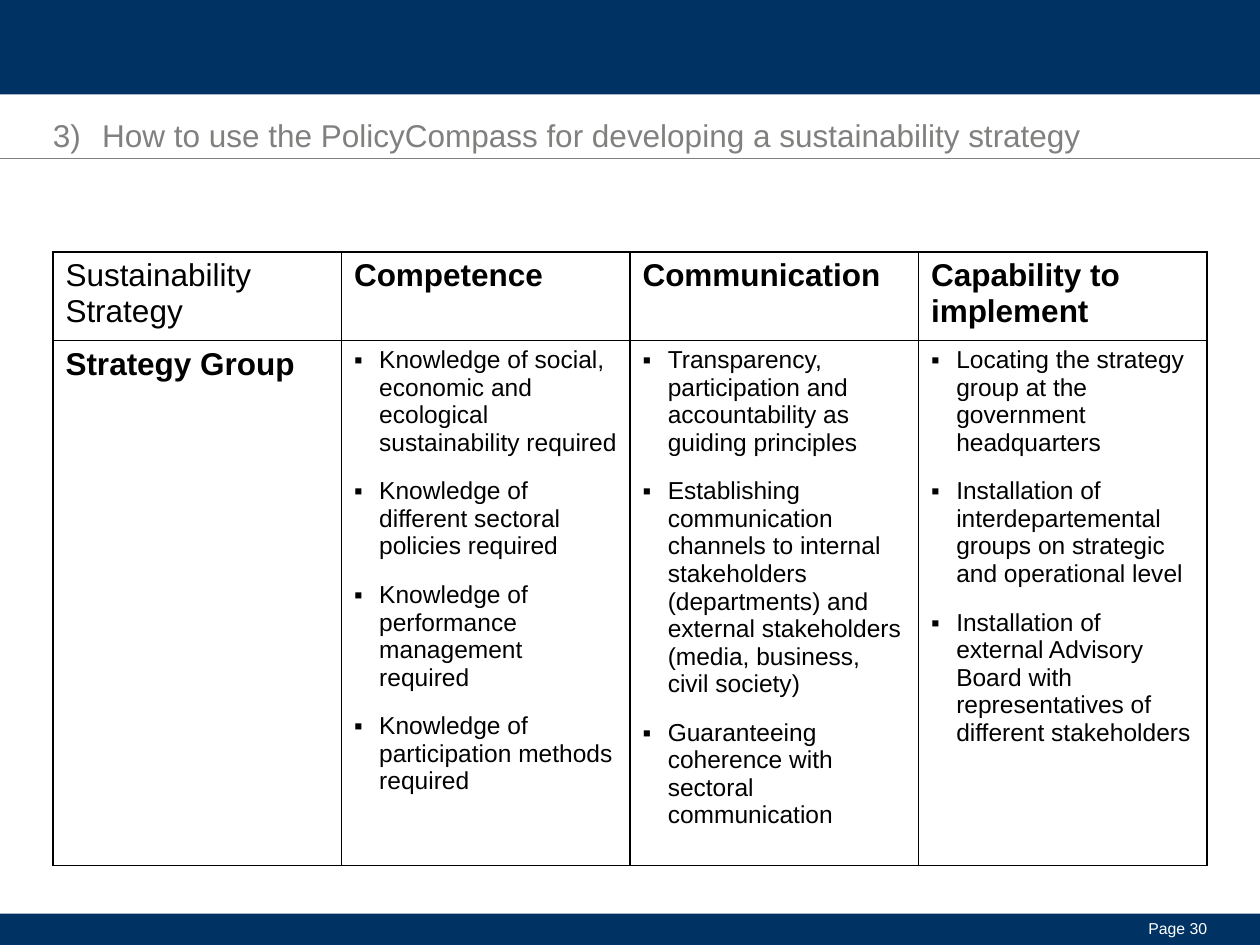
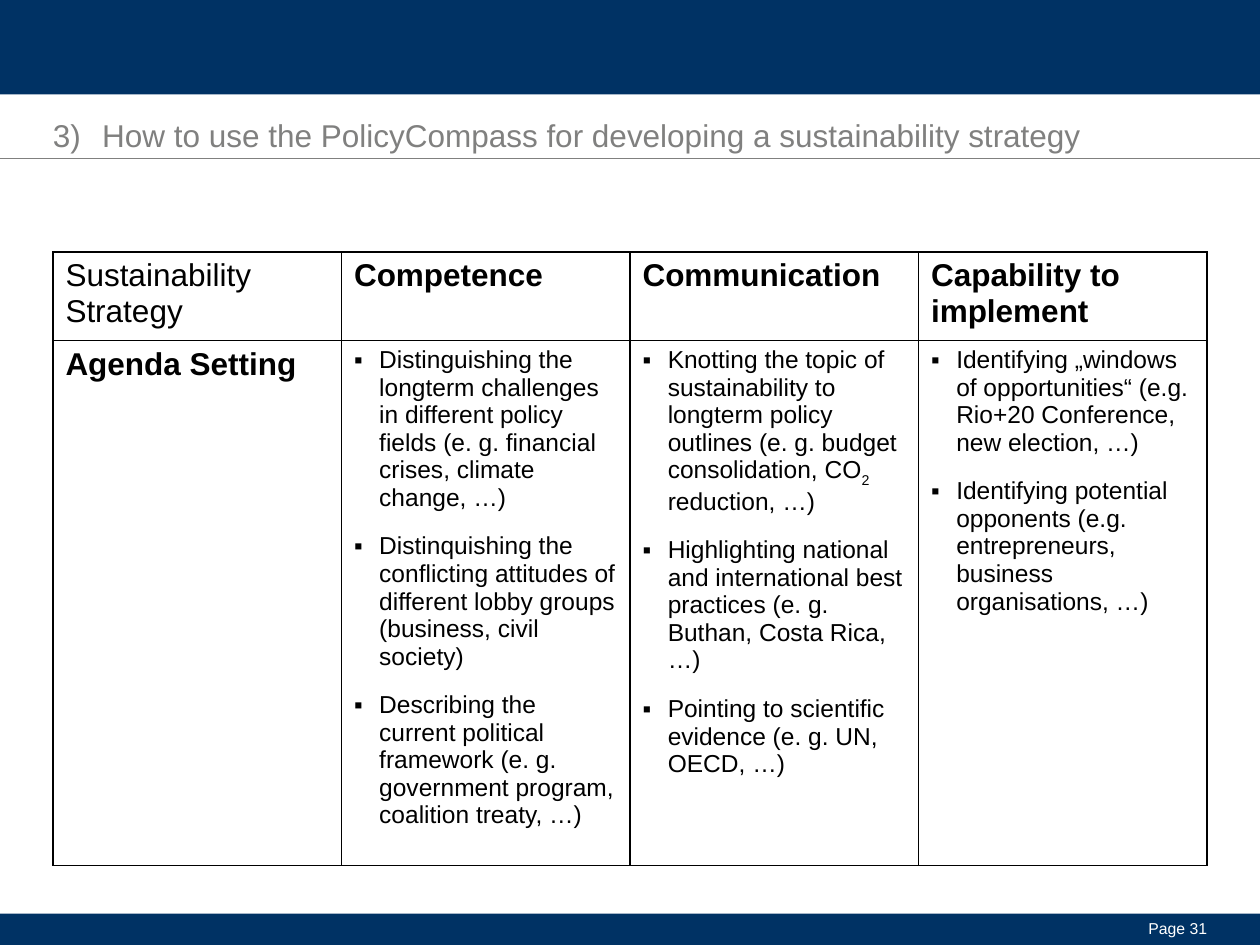
from lxml import etree
from pptx import Presentation
from pptx.dml.color import RGBColor
from pptx.enum import shapes, text
from pptx.oxml import ns
from pptx.util import Inches, Pt

NAVY = RGBColor(0x00, 0x32, 0x64)
GREY = RGBColor(0x80, 0x80, 0x7F)
BLACK = RGBColor(0, 0, 0)
WHITE = RGBColor(255, 255, 255)
FONT = "Arial"

SLIDE_WIDTH, SLIDE_HEIGHT = 10, 7.5
MARGIN = 0.42
CONTENT_WIDTH = SLIDE_WIDTH - 2 * MARGIN
TITLE = "3)\tHow to use the PolicyCompass for developing a sustainability strategy"
HEADINGS = ["Sustainability Strategy", "Competence", "Communication",
            "Capability to implement"]
HEADING_HEIGHT, BODY_HEIGHT = 0.66, 3.93

# Each stage: page number, name, and one list of points per criterion.
# A point is a string, or a list of (text, is_subscript) parts.
STAGES = [
    (30, "Strategy Group", [
        ["Knowledge of social, economic and ecological sustainability required",
         "Knowledge of different sectoral policies required",
         "Knowledge of performance management required",
         "Knowledge of participation methods required"],
        ["Transparency, participation and accountability as guiding principles",
         "Establishing communication channels to internal stakeholders "
         "(departments) and external stakeholders (media, business, civil society)",
         "Guaranteeing coherence with sectoral communication"],
        ["Locating the strategy group at the government headquarters",
         "Installation of interdepartemental groups on strategic and "
         "operational level",
         "Installation of external Advisory Board with representatives of "
         "different stakeholders"],
    ]),
    (31, "Agenda Setting", [
        ["Distinguishing the longterm challenges in different policy fields "
         "(e. g. financial crises, climate change, …)",
         "Distinquishing the conflicting attitudes of different lobby groups "
         "(business, civil society)",
         "Describing the current political framework (e. g. government "
         "program, coalition treaty, …)"],
        [[("Knotting the topic of sustainability to longterm policy outlines "
           "(e. g. budget consolidation, CO", False),
          ("2 ", True), ("reduction, …)", False)],
         "Highlighting national and international best practices "
         "(e. g. Buthan, Costa Rica, …)",
         "Pointing to scientific evidence (e. g. UN, OECD, …)"],
        ["Identifying „windows of opportunities“ (e.g. Rio+20 Conference, "
         "new election, …)",
         "Identifying potential opponents (e.g. entrepreneurs, business "
         "organisations, …)"],
    ]),
]


def style_runs(paragraph, size, color, bold=False):
    for run in paragraph.runs:
        run.font.name = FONT
        run.font.size = Pt(size)
        run.font.bold = bold
        run.font.color.rgb = color


def set_hanging_indent(paragraph, indent):
    properties = paragraph._p.get_or_add_pPr()
    properties.set("marL", str(Inches(indent)))
    properties.set("indent", str(-Inches(indent)))
    return properties


def clear_margins(frame):
    frame.margin_left = frame.margin_right = 0
    frame.margin_top = frame.margin_bottom = 0
    frame.word_wrap = True


def add_band(slide, top, height):
    band = slide.shapes.add_shape(
        shapes.MSO_SHAPE.RECTANGLE, 0, Inches(top), Inches(SLIDE_WIDTH), Inches(height))
    band.shadow.inherit = False
    band.fill.solid()
    band.fill.fore_color.rgb = NAVY
    band.line.fill.background()


def add_title_rule(slide):
    y = Inches(1.26)
    rule = slide.shapes.add_connector(
        shapes.MSO_CONNECTOR.STRAIGHT, 0, y, Inches(SLIDE_WIDTH), y)
    rule.line.color.rgb = GREY
    rule.line.width = Pt(0.5)
    etree.SubElement(rule._element.spPr, ns.qn("a:effectLst"))


def format_title(slide):
    title = slide.shapes.title
    title.left, title.top = Inches(MARGIN), Inches(0.92)
    title.width, title.height = Inches(CONTENT_WIDTH), Inches(0.42)
    frame = title.text_frame
    frame.text = TITLE
    clear_margins(frame)
    frame.vertical_anchor = text.MSO_ANCHOR.TOP
    frame.auto_size = text.MSO_AUTO_SIZE.NONE
    heading = frame.paragraphs[0]
    set_hanging_indent(heading, 0.39)
    heading.alignment = text.PP_ALIGN.LEFT
    style_runs(heading, 18, GREY)


def add_page_number(slide, number):
    width = 0.75
    box = slide.shapes.add_textbox(
        Inches(SLIDE_WIDTH - MARGIN - width), Inches(7.29), Inches(width), Inches(0.19))
    frame = box.text_frame
    frame.text = f"Page {number}"
    clear_margins(frame)
    frame.paragraphs[0].alignment = text.PP_ALIGN.RIGHT
    style_runs(frame.paragraphs[0], 9, WHITE)


def format_cell(cell):
    """Give the cell thin black borders and a white fill."""
    properties = cell._tc.get_or_add_tcPr()
    for side in ("lnL", "lnR", "lnT", "lnB"):
        border = etree.SubElement(properties, ns.qn(f"a:{side}"), w=str(Pt(1)))
        fill = etree.SubElement(border, ns.qn("a:solidFill"))
        etree.SubElement(fill, ns.qn("a:srgbClr"), val=str(BLACK))
    cell.fill.solid()
    cell.fill.fore_color.rgb = WHITE


def write_label(cell, label, bold=True):
    cell.text_frame.text = label
    style_runs(cell.text_frame.paragraphs[0], 18, BLACK, bold)


def write_points(cell, points):
    frame = cell.text_frame
    for index, point in enumerate(points):
        paragraph = frame.add_paragraph() if index else frame.paragraphs[0]
        properties = set_hanging_indent(paragraph, 0.2)
        etree.SubElement(properties, ns.qn("a:buFont"), typeface=FONT)
        etree.SubElement(properties, ns.qn("a:buChar"), char="▪")
        paragraph.space_after = Pt(12)
        parts = [(point, False)] if isinstance(point, str) else point
        for words, is_subscript in parts:
            run = paragraph.add_run()
            run.text = words
            if is_subscript:
                run._r.get_or_add_rPr().set("baseline", "-25000")
        style_runs(paragraph, 14, BLACK)


def add_criteria_table(slide, stage, criteria):
    frame = slide.shapes.add_table(
        2, len(HEADINGS), Inches(MARGIN), Inches(2),
        Inches(CONTENT_WIDTH), Inches(HEADING_HEIGHT + BODY_HEIGHT))
    table = frame.table
    table.first_row = table.horz_banding = False
    table.rows[0].height = Inches(HEADING_HEIGHT)
    table.rows[1].height = Inches(BODY_HEIGHT)
    for cell in table.iter_cells():
        format_cell(cell)
    for column, heading in enumerate(HEADINGS):
        write_label(table.cell(0, column), heading, bold=column > 0)
    write_label(table.cell(1, 0), stage)
    for column, points in enumerate(criteria, start=1):
        write_points(table.cell(1, column), points)


def add_stage_slide(presentation, number, stage, criteria):
    slide = presentation.slides.add_slide(presentation.slide_layouts[5])
    add_band(slide, 7.25, 0.25)
    add_band(slide, 0, 0.75)
    add_title_rule(slide)
    add_page_number(slide, number)
    format_title(slide)
    add_criteria_table(slide, stage, criteria)


def main():
    presentation = Presentation()
    presentation.slide_width = Inches(SLIDE_WIDTH)
    presentation.slide_height = Inches(SLIDE_HEIGHT)
    for number, stage, criteria in STAGES:
        add_stage_slide(presentation, number, stage, criteria)
    presentation.save("out.pptx")


if __name__ == "__main__":
    main()
